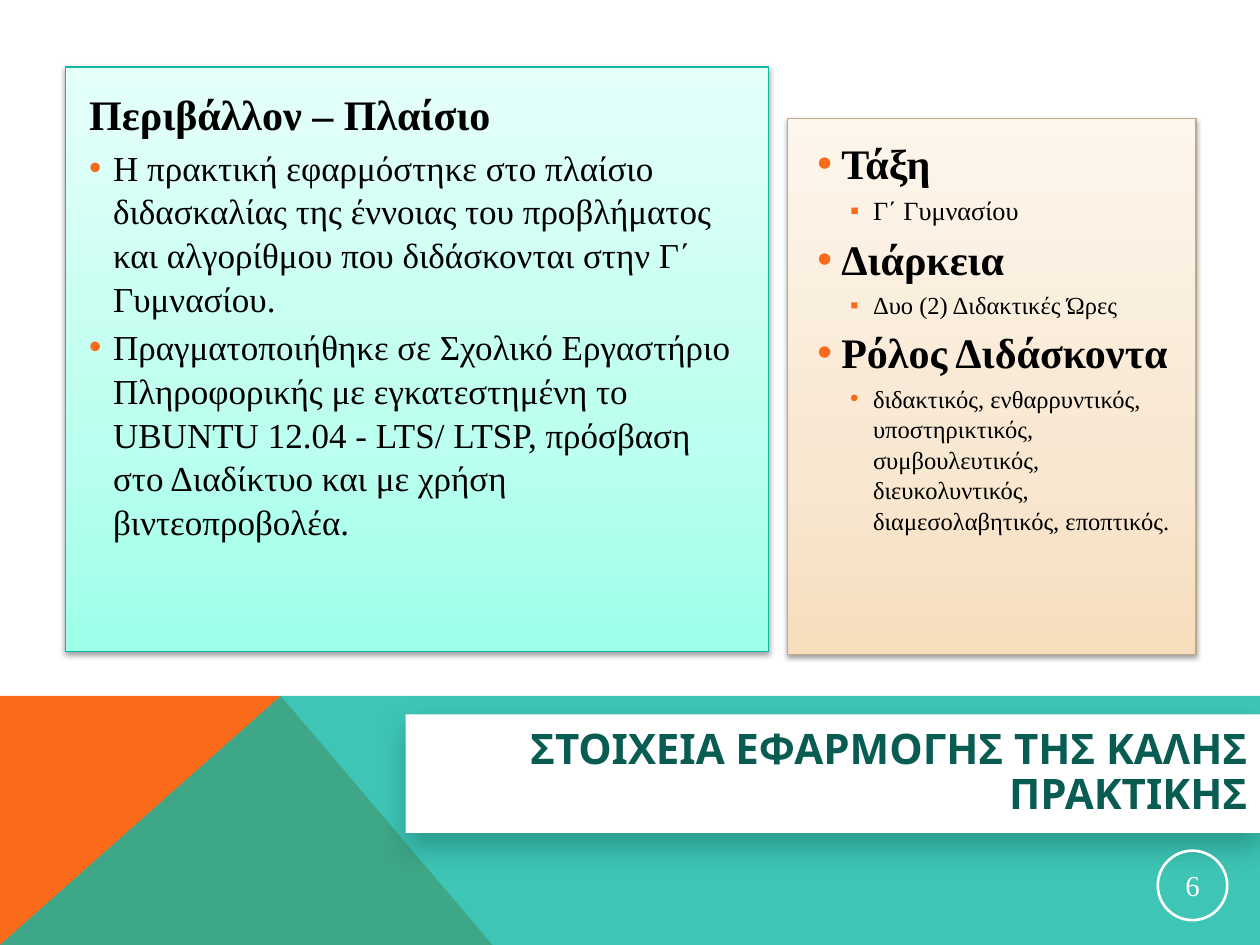
from lxml.etree import SubElement
from pptx import Presentation
from pptx.dml.color import RGBColor
from pptx.enum.shapes import MSO_SHAPE as Shape
from pptx.enum.text import MSO_ANCHOR as Anchor, PP_ALIGN as Align
from pptx.oxml.ns import qn
from pptx.util import Cm, Pt

ORANGE = RGBColor(0xF9, 0x6A, 0x1B)
TEAL = RGBColor(0x10, 0xB7, 0xA3)
DARK_TEAL = RGBColor(0x08, 0x5C, 0x52)
MINT_LINE = RGBColor(0x0C, 0xB7, 0xA3)
MINT = ("9DFFEA", "BAFFEF", "E5FFF9")
SAND_LINE = RGBColor(0xBF, 0xA9, 0x89)
SAND = ("F6DEBD", "F8E7D1", "FDF6EC")
BLACK = RGBColor(0, 0, 0)
WHITE = RGBColor(0xFF, 0xFF, 0xFF)
SERIF = "Times New Roman"

# Paragraph styles: bullet, left margin and hanging indent in cm
HEADING = (None, 0.97, 0.97)
DOT = ("•", 0.48, 0.48)
SUB_SQUARE = ("▪", 1.12, 0.46)
SUB_DOT = ("•", 1.12, 0.46)


def add_shadow(shape, color, opacity, blur, distance):
    """Drop a shadow straight down; opacity in percent, the rest in points."""
    shape.shadow.inherit = False
    effects = shape._element.spPr.find(qn("a:effectLst"))
    outer = SubElement(effects, qn("a:outerShdw"), blurRad=str(Pt(blur)),
                       dist=str(Pt(distance)), dir="5400000", rotWithShape="0")
    tint = SubElement(outer, qn("a:srgbClr"), val=str(color))
    SubElement(tint, qn("a:alpha"), val=str(opacity * 1000))


deck = Presentation()
deck.slide_width, deck.slide_height = Cm(25.4), Cm(19.05)
page = deck.slides.add_slide(deck.slide_layouts[6])
shapes = page.shapes

# Coloured band at the bottom
bands = [
    (ORANGE, 100, [(0, 19.05), (0, 14.03), (5.66, 14.03), (9.93, 19.05)]),
    (TEAL, 80, [(0, 19.05), (5.66, 14.03), (25.4, 14.03), (25.4, 19.05)]),
]
for color, opacity, corners in bands:
    points = [(Cm(x), Cm(y)) for x, y in corners]
    builder = shapes.build_freeform(*points[0])
    builder.add_line_segments(points[1:], close=True)
    band = builder.convert_to_shape()
    band.shadow.inherit = False
    band.line.fill.background()
    band.fill.solid()
    band.fill.fore_color.rgb = color
    if opacity < 100:
        tint = band._element.spPr.find(qn("a:solidFill"))[0]
        SubElement(tint, qn("a:alpha"), val=str(opacity * 1000))

# Gradient panels behind the two columns
panels = [
    ((15.88, 2.39, 8.23, 10.8), SAND, SAND_LINE),
    ((1.32, 1.35, 14.17, 11.79), MINT, MINT_LINE),
]
for place, colors, line_color in panels:
    panel = shapes.add_shape(Shape.RECTANGLE, *map(Cm, place))
    panel.fill.gradient()
    panel.fill.gradient_angle = 90
    stops = panel._element.spPr.find(".//" + qn("a:gsLst"))
    for stop in list(stops):
        stops.remove(stop)
    for position, color in zip((0, 35, 100), colors):
        stop = SubElement(stops, qn("a:gs"), pos=str(position * 1000))
        SubElement(stop, qn("a:srgbClr"), val=color)
    panel.line.color.rgb = line_color
    panel.line.width = Pt(0.75)
    add_shadow(panel, BLACK, 38, 3.1, 1.6)

# Title
title = shapes.add_shape(Shape.RECTANGLE, Cm(8.18), Cm(14.4), Cm(17.22), Cm(2.39))
title.fill.solid()
title.fill.fore_color.rgb = WHITE
title.line.fill.background()
add_shadow(title, DARK_TEAL, 40, 16, 8)
title.text_frame.word_wrap = True
title.text_frame.vertical_anchor = Anchor.MIDDLE
para = title.text_frame.paragraphs[0]
para.text = "ΣΤΟΙΧΕΙΑ ΕΦΑΡΜΟΓΗΣ ΤΗΣ ΚΑΛΗΣ ΠΡΑΚΤΙΚΗΣ"
para.alignment = Align.RIGHT
para.line_spacing = 0.88
font = para.runs[0].font
font.name, font.size, font.bold = "Karla", Pt(24), True
font.color.rgb = DARK_TEAL

# Text columns: style, size, bold, wording
columns = [
    ((1.55, 1.55, 13.77, 11.48), [
        (HEADING, 24, True, "Περιβάλλον – Πλαίσιο"),
        (DOT, 20, False, "Η πρακτική εφαρμόστηκε στο πλαίσιο διδασκαλίας της "
                         "έννοιας του προβλήματος και αλγορίθμου που διδάσκονται "
                         "στην Γ΄ Γυμνασίου."),
        (DOT, 20, False, "Πραγματοποιήθηκε σε Σχολικό Εργαστήριο Πληροφορικής με "
                         "εγκατεστημένη το UBUNTU 12.04 - LTS/ LTSP, πρόσβαση στο "
                         "Διαδίκτυο και με χρήση βιντεοπροβολέα."),
    ]),
    ((16.23, 2.54, 7.77, 10.31), [
        (DOT, 24, True, "Τάξη"),
        (SUB_SQUARE, 15, False, "Γ΄ Γυμνασίου"),
        (DOT, 24, True, "Διάρκεια"),
        (SUB_SQUARE, 14, False, "Δυο (2) Διδακτικές Ώρες"),
        (DOT, 24, True, "Ρόλος Διδάσκοντα"),
        (SUB_DOT, 14, False, "διδακτικός, ενθαρρυντικός, υποστηρικτικός, "
                             "συμβουλευτικός, διευκολυντικός, διαμεσολαβητικός, "
                             "εποπτικός."),
    ]),
]
for place, lines in columns:
    frame = shapes.add_textbox(*map(Cm, place)).text_frame
    frame.word_wrap = True
    frame.margin_top = Cm(0.2)
    for index, (style, size, bold, wording) in enumerate(lines):
        para = frame.add_paragraph() if index else frame.paragraphs[0]
        para.text = wording
        para.line_spacing = 1.04
        if index:
            para.space_before = Pt(3)
        bullet, margin, hanging = style
        props = para._p.get_or_add_pPr()
        props.set("marL", str(Cm(margin)))
        props.set("indent", str(-Cm(hanging)))
        if bullet:
            tint = SubElement(props, qn("a:buClr"))
            SubElement(tint, qn("a:srgbClr"), val=str(ORANGE))
            SubElement(props, qn("a:buFont"), typeface="Arial")
            SubElement(props, qn("a:buChar"), char=bullet)
        font = para.runs[0].font
        font.name, font.size, font.bold = SERIF, Pt(size), bold
        font.color.rgb = BLACK

# Page number
badge = shapes.add_shape(Shape.OVAL, Cm(23.34), Cm(17.15), Cm(1.4), Cm(1.4))
badge.shadow.inherit = False
badge.fill.background()
badge.line.color.rgb = WHITE
badge.line.width = Pt(1.5)
frame = badge.text_frame
frame.margin_left = frame.margin_right = Cm(0.03)
frame.margin_top = frame.margin_bottom = Cm(0.03)
frame.vertical_anchor = Anchor.MIDDLE
para = frame.paragraphs[0]
para.text = "6"
para.alignment = Align.CENTER
font = para.runs[0].font
font.name, font.size = SERIF, Pt(16.5)
font.color.rgb = WHITE

deck.save("out.pptx")
